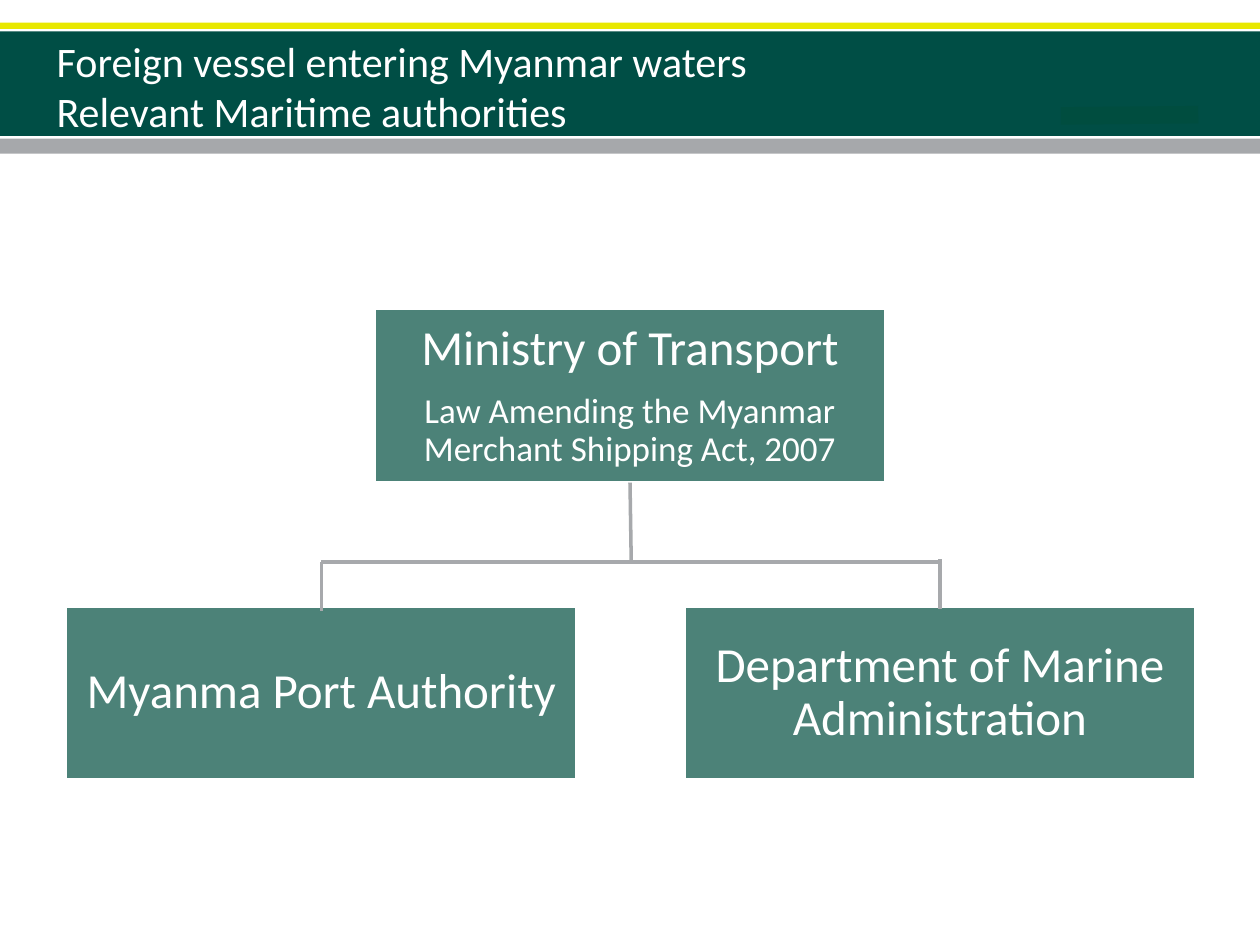
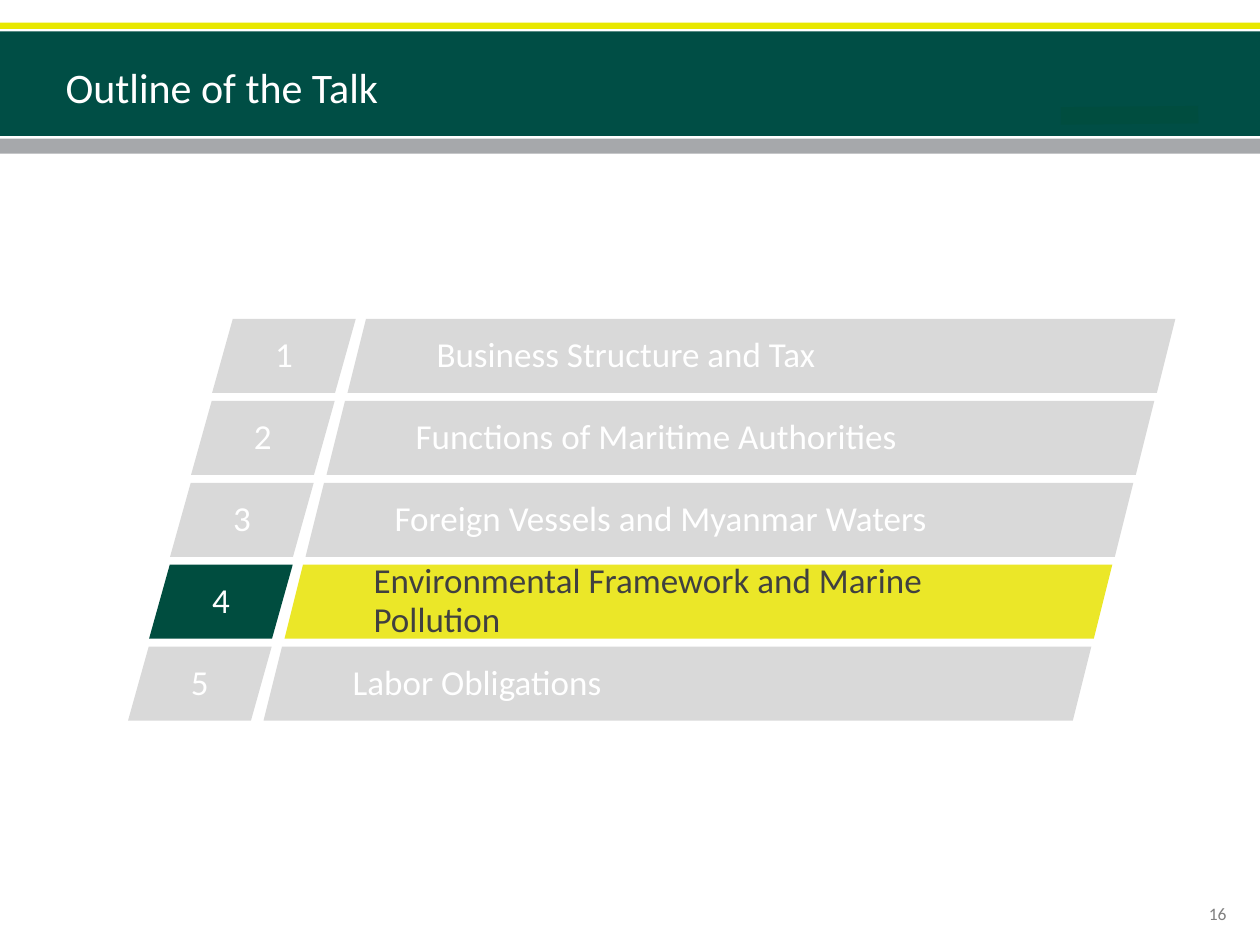
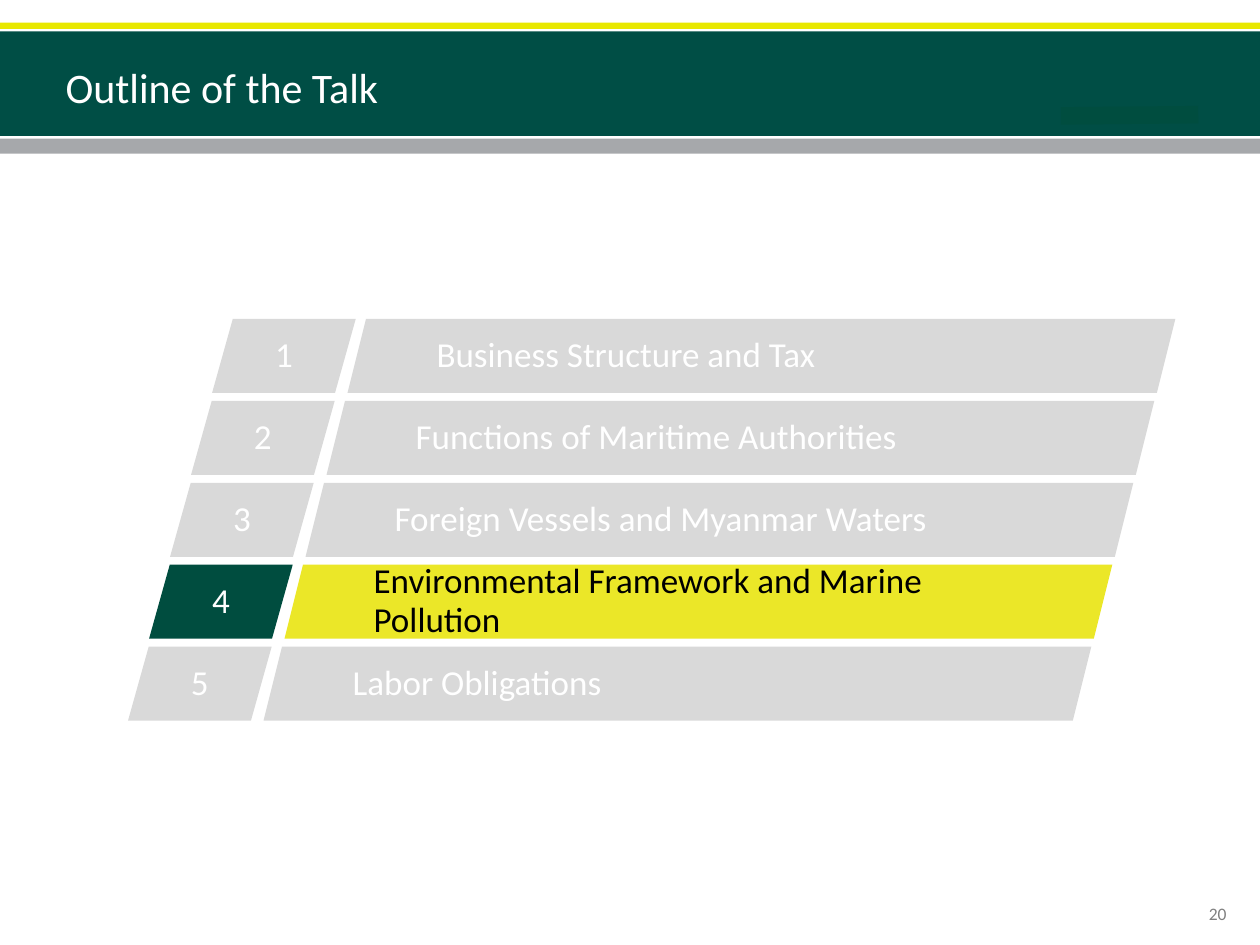
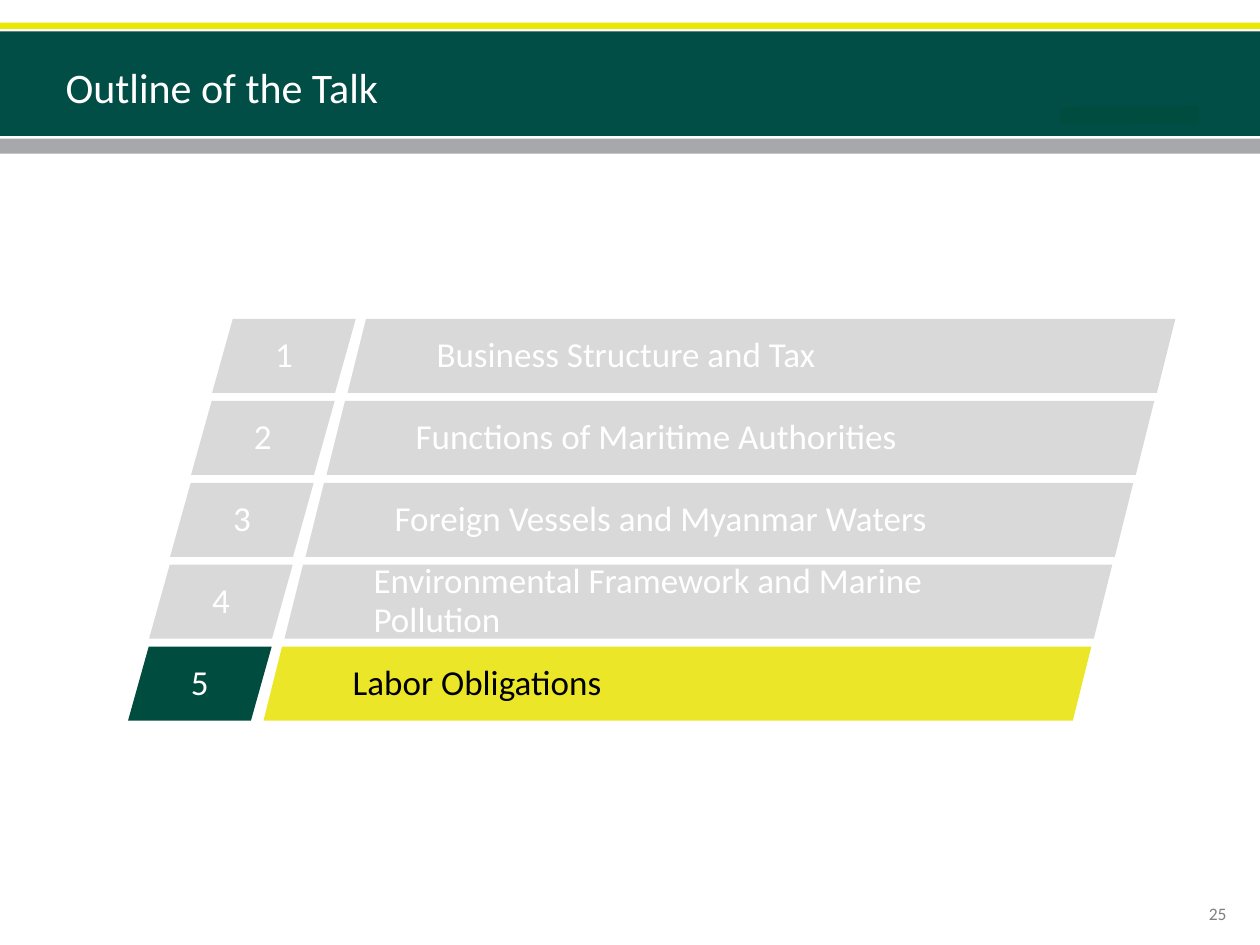
from typing import NamedTuple

from lxml import etree
from pptx import Presentation
from pptx.dml.color import RGBColor
from pptx.enum.shapes import MSO_CONNECTOR, MSO_SHAPE
from pptx.enum.text import MSO_ANCHOR, MSO_AUTO_SIZE, PP_ALIGN
from pptx.oxml.ns import qn
from pptx.util import Pt

RECTANGLE, PARALLELOGRAM = MSO_SHAPE.RECTANGLE, MSO_SHAPE.PARALLELOGRAM
STRAIGHT = MSO_CONNECTOR.STRAIGHT
LEFT, CENTER = PP_ALIGN.LEFT, PP_ALIGN.CENTER
TOP, MIDDLE = MSO_ANCHOR.TOP, MSO_ANCHOR.MIDDLE
NO_AUTOFIT = MSO_AUTO_SIZE.NONE

FONT = "Calibri"
WHITE, BLACK, DARK_GREY, PAGE_GREY = "FFFFFF", "000000", "404040", "808080"
BAND_GREEN, BAND_YELLOW, BAND_GREY = "004E45", "E8E800", "A6A8AB"
GREEN, YELLOW, MUTED, BRANCH_GREY = "004D3F", "EBE728", "D9D9D9", "A7A9AC"


class Box(NamedTuple):
    """A rectangle in points."""
    left: float
    top: float
    width: float
    height: float

    def lengths(self) -> list:
        return [Pt(value) for value in self]


class Band(NamedTuple):
    box: Box
    color: str


class Office(NamedTuple):
    left: float
    top: float
    name: str
    law: str = ""


class Branch(NamedTuple):
    """A connecting line of the organisation chart, in points."""
    x1: float
    y1: float
    x2: float
    y2: float


class Outline(NamedTuple):
    active: int
    active_color: str
    page: str


BANDS = [
    Band(Box(0, 18, 720, 59.76), BAND_GREEN),
    Band(Box(0, 12.96, 720, 3.6), BAND_YELLOW),
    Band(Box(0, 79.2, 720, 8.64), BAND_GREY),
]
BAND_MARK = Branch(606.24, 66.24, 684.72, 65.52)

OFFICE_WIDTH, OFFICE_HEIGHT = 292.32, 99.36
OFFICES = [
    Office(213.84, 176.4, "Ministry of Transport",
           "Law Amending the Myanmar Merchant Shipping Act, 2007"),
    Office(37.44, 346.32, "Myanma Port Authority"),
    Office(390.96, 346.32, "Department of Marine Administration"),
]
BRANCHES = [
    Branch(360, 275.76, 360.72, 321.12),
    Branch(183.6, 321.12, 537.12, 321.12),
    Branch(183.6, 321.12, 183.6, 349.2),
    Branch(537.12, 319.68, 537.12, 347.76),
]

TOPICS = [
    "Business Structure and Tax",
    "Functions of Maritime Authorities",
    "Foreign Vessels and Myanmar Waters",
    "Environmental Framework and Marine Pollution",
    "Labor Obligations",
]
FIRST_NUMBER = Box(121.2, 182.3, 82.08, 42.3)
FIRST_TOPIC = Box(198.6, 182.3, 473.04, 42.3)
ROW_PITCH, ROW_SHIFT = 46.8, -12
NUMBER_SLANT = 0.28
OUTLINES = [
    Outline(4, DARK_GREY, "16"),
    Outline(4, BLACK, "20"),
    Outline(5, BLACK, "25"),
]
OUTLINE_TITLE_BOX = Box(30.24, 21.6, 540, 55.44)
PAGE_BOX = Box(671.76, 512.64, 48.24, 27.36)


def rgb(color: str) -> RGBColor:
    return RGBColor.from_string(color)


def write(shape, *lines: str, sizes=(20,), color: str = WHITE, align=LEFT,
          anchor=MIDDLE, spacing: float = 1, gap: float = 0, inset=None) -> None:
    """Write one paragraph per line; the last size serves any further lines."""
    frame = shape.text_frame
    frame.word_wrap = True
    frame.auto_size = NO_AUTOFIT
    frame.vertical_anchor = anchor
    if inset is not None:
        frame.margin_left = frame.margin_right = Pt(inset)
        frame.margin_top = frame.margin_bottom = Pt(inset)
    for index, line in enumerate(lines):
        paragraph = frame.add_paragraph() if index else frame.paragraphs[0]
        paragraph.alignment = align
        paragraph.line_spacing = spacing
        if index:
            paragraph.space_before = Pt(gap)
        run = paragraph.add_run()
        run.text = line
        run.font.name = FONT
        run.font.size = Pt(sizes[min(index, len(sizes) - 1)])
        run.font.color.rgb = rgb(color)


def add_panel(slide, kind, box: Box, color: str):
    panel = slide.shapes.add_shape(kind, *box.lengths())
    panel.shadow.inherit = False
    panel.fill.solid()
    panel.fill.fore_color.rgb = rgb(color)
    panel.line.fill.background()
    return panel


def add_line(slide, ends: Branch, color: str, width: float):
    line = slide.shapes.add_connector(STRAIGHT, *[Pt(value) for value in ends])
    line.line.color.rgb = rgb(color)
    line.line.width = Pt(width)
    etree.SubElement(line.element.spPr, qn("a:effectLst"))
    return line


def set_opacity(shape, percent: int) -> None:
    color = shape.element.spPr.find(qn("a:solidFill"))[0]
    etree.SubElement(color, qn("a:alpha"), val=str(percent * 1000))


def move_bands_to_layout(slide) -> None:
    """Draw the header bands and place them behind the layout's placeholders."""
    parts = [add_panel(slide, RECTANGLE, band.box, band.color) for band in BANDS]
    parts.append(add_line(slide, BAND_MARK, GREEN, 10))
    layout_tree = slide.slide_layout.shapes.element
    for position, part in enumerate(parts, start=2):
        layout_tree.insert(position, part.element)


def add_slide(deck, layout, box: Box, *title_lines: str):
    slide = deck.slides.add_slide(layout)
    title = slide.shapes.title
    title.left, title.top, title.width, title.height = box.lengths()
    write(title, *title_lines, sizes=(24,))
    return slide


def add_office(slide, office: Office) -> None:
    box = Box(office.left, office.top, OFFICE_WIDTH, OFFICE_HEIGHT)
    panel = add_panel(slide, RECTANGLE, box, GREEN)
    set_opacity(panel, 70)
    panel.line.color.rgb = rgb(WHITE)
    panel.line.width = Pt(2)
    lines = [office.name, office.law] if office.law else [office.name]
    write(panel, *lines, sizes=(28, 20), align=CENTER, spacing=0.9, gap=10, inset=1.4)


def add_outline(slide, outline: Outline) -> None:
    for row, topic in enumerate(TOPICS):
        active = row + 1 == outline.active
        number_box, topic_box = (
            first._replace(left=first.left + row * ROW_SHIFT,
                           top=first.top + row * ROW_PITCH)
            for first in (FIRST_NUMBER, FIRST_TOPIC))
        number = add_panel(slide, PARALLELOGRAM, number_box, GREEN if active else MUTED)
        number.adjustments[0] = NUMBER_SLANT
        write(number, str(row + 1), align=CENTER, spacing=0.93)
        label = add_panel(slide, PARALLELOGRAM, topic_box, YELLOW if active else MUTED)
        write(label, topic, color=outline.active_color if active else WHITE, spacing=0.93)
    page = slide.shapes.add_textbox(*PAGE_BOX.lengths())
    write(page, outline.page, sizes=(10,), color=PAGE_GREY, align=CENTER, anchor=TOP)


def main() -> None:
    deck = Presentation()
    deck.slide_width, deck.slide_height = Pt(720), Pt(540)
    title_only = deck.slide_layouts[5]

    authorities = add_slide(deck, title_only, Box(25.2, 27.6, 509.76, 42.48),
                            "Foreign vessel entering Myanmar waters",
                            "Relevant Maritime authorities")
    move_bands_to_layout(authorities)
    for office in OFFICES:
        add_office(authorities, office)
    for branch in BRANCHES:
        add_line(authorities, branch, BRANCH_GREY, 2)

    for outline in OUTLINES:
        slide = add_slide(deck, title_only, OUTLINE_TITLE_BOX, "Outline of the Talk")
        add_outline(slide, outline)

    deck.save("out.pptx")


if __name__ == "__main__":
    main()
